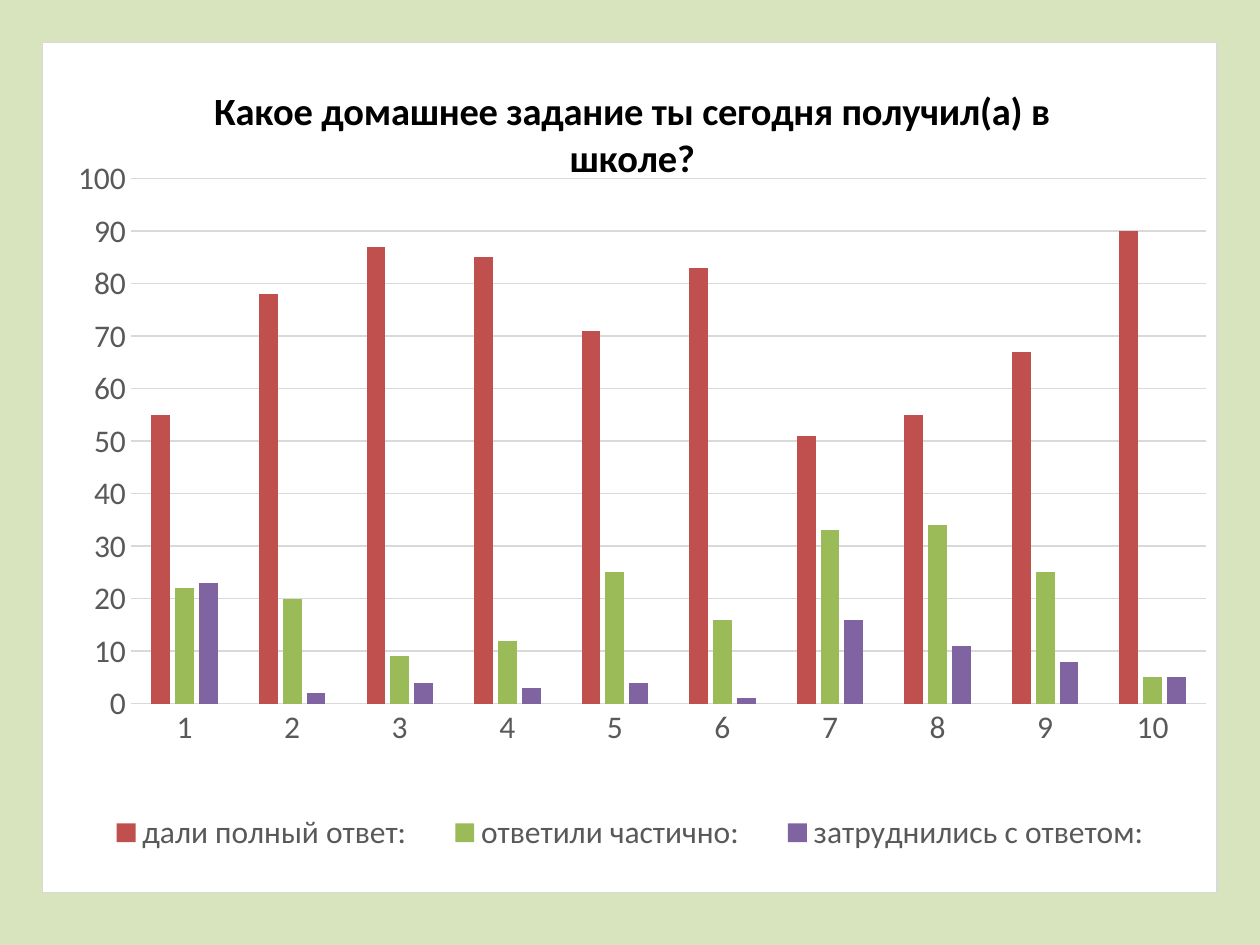
"""Build a slide with a clustered column chart of pupils' answers."""
from dataclasses import dataclass
from typing import Optional

from lxml import etree
from pptx import Presentation
from pptx import util as u
from pptx.chart.data import CategoryChartData
from pptx.dml.color import RGBColor
from pptx.enum import chart as ch
from pptx.oxml import parse_xml
from pptx.oxml.ns import nsdecls, qn

BACKGROUND = RGBColor(0xD7, 0xE4, 0xBD)
BLACK = RGBColor(0x00, 0x00, 0x00)
GREY = RGBColor(0x59, 0x59, 0x59)
RULE = RGBColor(0xD9, 0xD9, 0xD9)
RED = RGBColor(0xC0, 0x50, 0x4D)
GREEN = RGBColor(0x9B, 0xBB, 0x59)
PURPLE = RGBColor(0x80, 0x64, 0xA2)
FONT = "Calibri"
TITLE = "Какое домашнее задание ты сегодня получил(а) в школе?"


@dataclass(frozen=True)
class Answer:
    name: str
    values: tuple[int, ...]
    color: RGBColor


@dataclass(frozen=True)
class Area:
    x: float
    y: float
    w: Optional[float] = None
    h: Optional[float] = None
    inner: bool = False


ANSWERS = (
    Answer("дали полный ответ:", (55, 78, 87, 85, 71, 83, 51, 55, 67, 90), RED),
    Answer("ответили частично:", (22, 20, 9, 12, 25, 16, 33, 34, 25, 5), GREEN),
    Answer("затруднились с ответом:", (23, 2, 4, 3, 4, 1, 16, 11, 8, 5), PURPLE),
)
TITLE_AREA = Area(0.14, 0.04)
PLOT_AREA = Area(0.075, 0.16, 0.916, 0.618, inner=True)
LEGEND_AREA = Area(0.03, 0.88, 0.94, 0.1)


def style_font(font, size: int, color: RGBColor, bold: bool = False) -> None:
    """Set typeface, size, colour and weight."""
    font.name, font.size, font.bold = FONT, u.Pt(size), bold
    font.color.rgb = color


def style_line(line) -> None:
    """Give a line the thin grey rule style."""
    line.color.rgb = RULE
    line.width = u.Pt(0.75)


def place(parent, index: int, area: Area) -> None:
    """Put a manual layout at the given child index of a chart part."""
    for old in parent.findall(qn("c:layout")):
        parent.remove(old)
    layout = etree.Element(qn("c:layout"))
    manual = etree.SubElement(layout, qn("c:manualLayout"))
    settings = [("layoutTarget", "inner")] if area.inner else []
    settings += [("xMode", "edge"), ("yMode", "edge")]
    settings += [(k, getattr(area, k)) for k in "xywh" if getattr(area, k) is not None]
    for tag, value in settings:
        etree.SubElement(manual, qn(f"c:{tag}")).set("val", str(value))
    parent.insert(index, layout)


def frame_chart(chart) -> None:
    """Fill the chart area with white and outline it."""
    frame = parse_xml(
        f'<c:spPr {nsdecls("c", "a")}><a:solidFill><a:srgbClr val="FFFFFF"/></a:solidFill>'
        f'<a:ln w="{u.Pt(0.75)}"><a:solidFill><a:srgbClr val="{RULE}"/></a:solidFill></a:ln>'
        "</c:spPr>"
    )
    chart.element.find(qn("c:chart")).addnext(frame)


def style_title(chart) -> None:
    """Write the chart title and place it."""
    title = chart.chart_title
    p = title.text_frame.paragraphs[0]
    r = p.add_run()
    r.text = TITLE
    style_font(r.font, 22, BLACK, bold=True)
    place(title.element, 1, TITLE_AREA)
    title.include_in_layout = False


def style_axes(chart) -> None:
    """Style both axes and the horizontal grid."""
    cat, val = chart.category_axis, chart.value_axis
    for axis in (cat, val):
        axis.major_tick_mark = axis.minor_tick_mark = ch.XL_TICK_MARK.NONE
        style_font(axis.tick_labels.font, 18, GREY)
    style_line(cat.format.line)
    val.format.line.fill.background()
    val.minimum_scale, val.maximum_scale, val.major_unit = 0, 100, 10
    val.has_major_gridlines = True
    style_line(val.major_gridlines.format.line)


def add_answers_chart(s) -> None:
    """Add the column chart to the slide."""
    data = CategoryChartData()
    data.categories = [str(n) for n in range(1, 11)]
    for answer in ANSWERS:
        data.add_series(answer.name, answer.values)
    chart = s.shapes.add_chart(
        ch.XL_CHART_TYPE.COLUMN_CLUSTERED,
        u.Cm(0.85), u.Cm(0.85), u.Cm(23.7), u.Cm(17.15), data,
    ).chart
    style_font(chart.font, 18, BLACK)
    frame_chart(chart)
    style_title(chart)
    style_axes(chart)

    plot = chart.plots[0]
    plot.gap_width, plot.overlap, plot.vary_by_categories = 219, -27, False
    for series, answer in zip(plot.series, ANSWERS):
        series.format.fill.solid()
        series.format.fill.fore_color.rgb = answer.color
    place(chart.element.find(".//" + qn("c:plotArea")), 0, PLOT_AREA)

    chart.has_legend = True
    legend = chart.legend
    legend.position = ch.XL_LEGEND_POSITION.RIGHT
    legend.include_in_layout = False
    style_font(legend.font, 18, GREY)
    place(chart.element.find(".//" + qn("c:legend")), 1, LEGEND_AREA)


def main() -> None:
    """Create and save the presentation."""
    prs = Presentation()
    prs.slide_width, prs.slide_height = u.Cm(25.4), u.Cm(19.05)
    s = prs.slides.add_slide(prs.slide_layouts[6])
    s.background.fill.solid()
    s.background.fill.fore_color.rgb = BACKGROUND
    add_answers_chart(s)
    prs.save("out.pptx")


if __name__ == "__main__":
    main()
